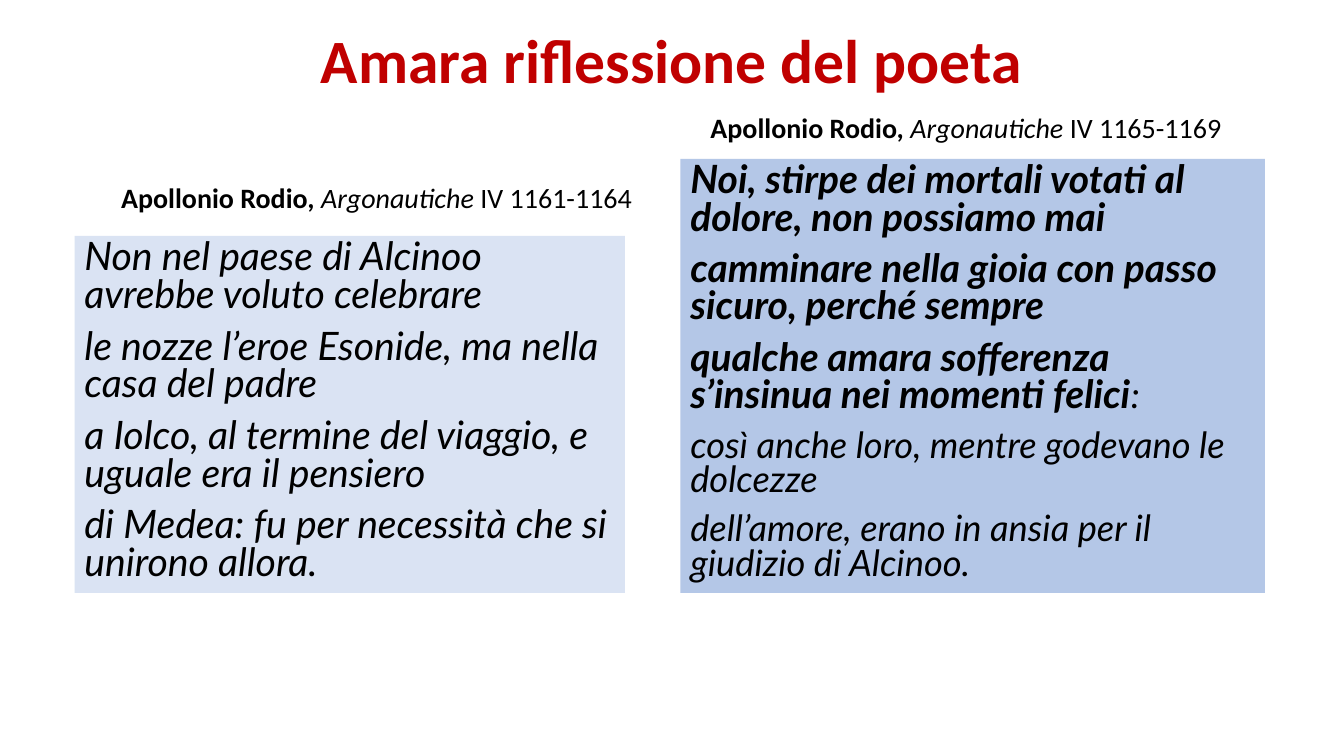
import pptx
import pptx.util
import pptx.dml.color
import pptx.enum.shapes
import pptx.enum.text

Pt = pptx.util.Pt
ALIGN = pptx.enum.text.PP_ALIGN
ANCHOR = pptx.enum.text.MSO_ANCHOR

COLORS = {
    "title": "C00000",
    "text": "000000",
    "left panel": "DAE3F3",
    "right panel": "B4C7E7",
}


class PoemSlide:
    """Holds the fonts, the colours and the current slide."""

    heading_font = "Calibri"
    verse_font = "Lato"

    def __init__(self, slide):
        self.slide = slide

    def color(self, name):
        return pptx.dml.color.RGBColor.from_string(COLORS[name])

    def style(self, run, font, size, color="text", bold=False, italic=False):
        run.font.name = font
        run.font.size = Pt(size)
        run.font.color.rgb = self.color(color)
        run.font.bold = bold
        run.font.italic = italic

    def text_box(self, box, anchor):
        shape = self.slide.shapes.add_textbox(*map(Pt, box))
        shape.text_frame.word_wrap = True
        shape.text_frame.vertical_anchor = anchor
        paragraph = shape.text_frame.paragraphs[0]
        paragraph.alignment = ALIGN.CENTER
        paragraph.line_spacing = 0.9
        return paragraph

    def title(self, box, text):
        paragraph = self.text_box(box, ANCHOR.MIDDLE)
        paragraph.text = text
        self.style(paragraph.runs[0], self.heading_font, 44, "title", bold=True)

    def citation(self, box, lines):
        paragraph = self.text_box(box, ANCHOR.BOTTOM)
        paragraph.space_before = Pt(10)
        parts = (("Apollonio Rodio, ", True, False),
                 ("Argonautiche ", False, True),
                 (lines, False, False))
        for text, bold, italic in parts:
            run = paragraph.add_run()
            run.text = text
            self.style(run, self.heading_font, 20, bold=bold, italic=italic)

    def verses(self, box, fill, verses):
        """Each verse is a list of (text, size, bold) parts."""
        shape = self.slide.shapes.add_shape(
            pptx.enum.shapes.MSO_SHAPE.RECTANGLE, *map(Pt, box))
        shape.shadow.inherit = False
        shape.fill.solid()
        shape.fill.fore_color.rgb = self.color(fill)
        shape.line.fill.background()
        frame = shape.text_frame
        frame.word_wrap = True
        frame.vertical_anchor = ANCHOR.TOP
        for index, parts in enumerate(verses):
            paragraph = frame.add_paragraph() if index else frame.paragraphs[0]
            paragraph.alignment = ALIGN.LEFT
            paragraph.line_spacing = 0.8
            paragraph.space_before = Pt(10)
            for text, size, bold in parts:
                run = paragraph.add_run()
                run.text = text
                self.style(run, self.verse_font, size, bold=bold, italic=True)


def main():
    presentation = pptx.Presentation()
    presentation.slide_width = Pt(960)
    presentation.slide_height = Pt(540)
    poem = PoemSlide(presentation.slides.add_slide(presentation.slide_layouts[6]))

    poem.title((66, 8, 828, 75), "Amara riflessione del poeta")

    # Left passage
    poem.citation((66, 120, 406, 36.5), "IV 1161-1164")
    left_verses = (
        "Non nel paese di Alcinoo avrebbe voluto celebrare",
        "le nozze l’eroe Esonide, ma nella casa del padre",
        "a Iolco, al termine del viaggio, e uguale era il pensiero",
        "di Medea: fu per necessità che si unirono allora.",
    )
    poem.verses((53.3, 168.5, 393.1, 255), "left panel",
                [[(verse, 28, False)] for verse in left_verses])

    # Right passage: the poet's reflection is bold and larger
    poem.citation((486, 70.5, 408, 36.5), "IV 1165-1169")
    large, small = 27.8, 25.9
    poem.verses((486, 113.5, 417.6, 310), "right panel", [
        [("Noi, stirpe dei mortali votati al dolore, non possiamo mai", large, True)],
        [("camminare nella gioia con passo sicuro, perché sempre", large, True)],
        [("qualche amara sofferenza s’insinua nei momenti felici", large, True),
         (":", small, False)],
        [("così anche loro, mentre godevano le dolcezze", small, False)],
        [("dell’amore, erano in ansia per il giudizio di Alcinoo.", small, False)],
    ])

    presentation.save("out.pptx")


if __name__ == "__main__":
    main()
